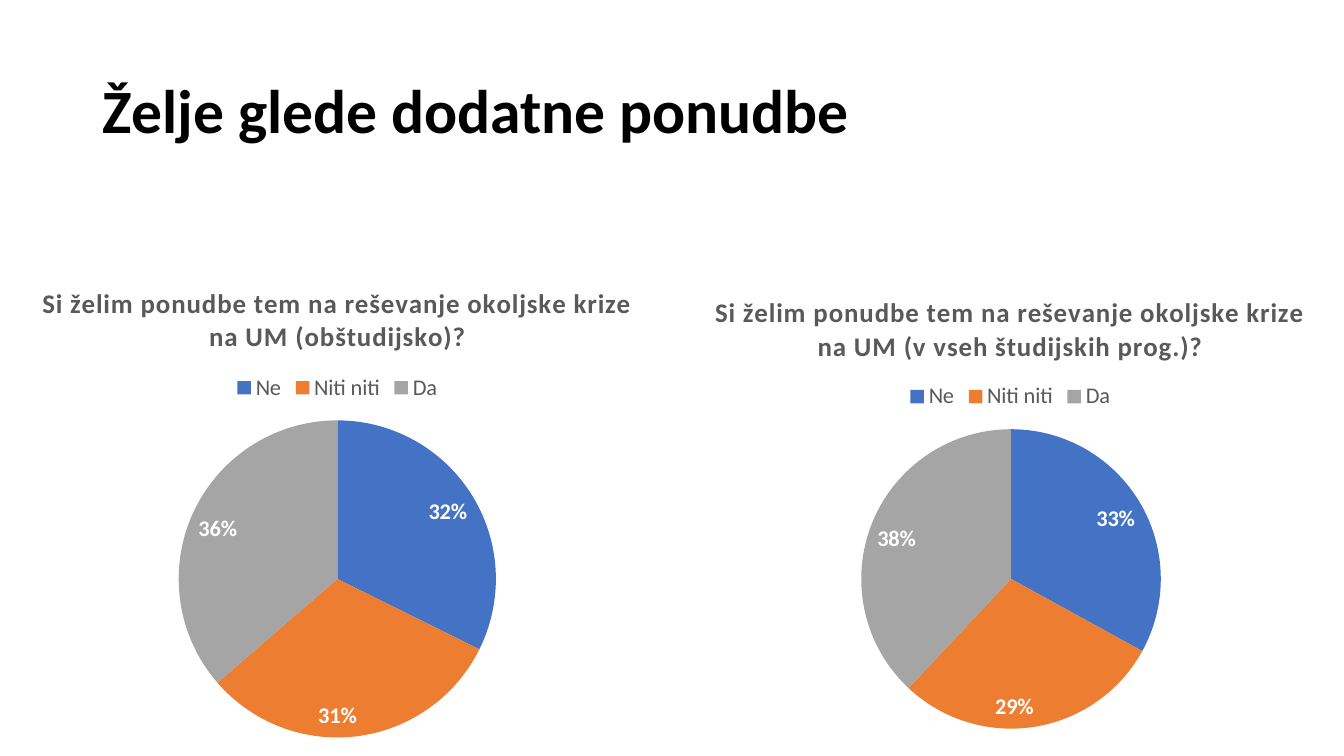
from pptx import Presentation
from pptx.chart.data import CategoryChartData
from pptx.dml.color import RGBColor
from pptx.enum.chart import XL_CHART_TYPE, XL_LABEL_POSITION, XL_LEGEND_POSITION
from pptx.enum.text import MSO_ANCHOR, PP_ALIGN
from pptx.oxml import parse_xml
from pptx.oxml.ns import nsdecls, qn
from pptx.util import Inches, Pt

PIE = XL_CHART_TYPE.PIE
TOP = XL_LEGEND_POSITION.TOP
INSIDE = XL_LABEL_POSITION.INSIDE_END
MIDDLE = MSO_ANCHOR.MIDDLE
LEFT = PP_ALIGN.LEFT
WIDE, HIGH = Inches(13.33), Inches(7.5)
FACE = "Calibri"
HUES = {"Ne": "4472C4", "Niti niti": "ED7D31", "Da": "A5A5A5",
        "ink": "000000", "gray": "595959", "white": "FFFFFF"}
ANSWERS = ("Ne", "Niti niti", "Da")


def style(font, size, hue, bold=False):
    """Set face, size, colour and weight of a font."""
    font.name, font.size, font.bold = FACE, Pt(size), bold
    font.color.rgb = RGBColor.from_string(HUES[hue])


def area(left, top, width, height):
    """Turn shares of the slide into lengths."""
    return [int(WIDE * left), int(HIGH * top), int(WIDE * width), int(HIGH * height)]


def pin(part, after, **shares):
    """Fix a chart part at shares of the chart's size."""
    for old in part.findall(qn("c:layout")):
        part.remove(old)
    inner = '<c:layoutTarget val="inner"/>' if "w" in shares else ""
    modes = "".join(f'<c:{key}Mode val="edge"/>' for key in "xy")
    sizes = "".join(f'<c:{key} val="{val}"/>' for key, val in shares.items())
    layout = parse_xml(f'<c:layout {nsdecls("c")}><c:manualLayout>{inner}{modes}'
                       f'{sizes}</c:manualLayout></c:layout>')
    if after:
        part.find(qn(after)).addnext(layout)
    else:
        part.insert(0, layout)


def add_title(slide, text):
    """Fill and place the slide title."""
    title = slide.shapes.title
    title.left, title.top, title.width, title.height = area(0.069, 0.054, 0.863, 0.193)
    frame = title.text_frame
    frame.text = text
    frame.vertical_anchor = MIDDLE
    line = frame.paragraphs[0]
    line.line_spacing = 0.9
    line.alignment = LEFT
    style(line.runs[0].font, 44, "ink", True)


def add_pie(slide, box, text, values, pie, key, head):
    """Add a pie chart of the answers to one question."""
    data = CategoryChartData()
    data.categories = ANSWERS
    data.add_series("Series 1", values)
    chart = slide.shapes.add_chart(PIE, *area(*box), data).chart
    style(chart.font, 16, "ink")
    chart.has_title = True
    frame = chart.chart_title.text_frame
    frame.text = text
    run = frame.paragraphs[0].runs[0]
    style(run.font, 19.2, "gray", True)
    run.font._element.set("spc", "50")
    chart.chart_title.include_in_layout = False
    chart.has_legend = True
    chart.legend.position = TOP
    chart.legend.include_in_layout = False
    style(chart.legend.font, 16, "gray")
    plot = chart.plots[0]
    plot.vary_by_categories = True
    for spot, name in enumerate(ANSWERS):
        fill = plot.series[0].points[spot].format.fill
        fill.solid()
        fill.fore_color.rgb = RGBColor.from_string(HUES[name])
    plot.has_data_labels = True
    labels = plot.data_labels
    labels.show_percentage, labels.show_value = True, False
    labels.number_format, labels.number_format_is_linked = "0%", False
    labels.position = INSIDE
    style(labels.font, 16, "white", True)
    pin(chart._chartSpace.chart.plotArea, None, **dict(zip("xywh", pie)))
    pin(chart.legend._element, "c:legendPos", **dict(zip("xy", key)))
    pin(chart.chart_title._element, "c:tx", **dict(zip("xy", head)))


def main():
    """Build and save the slide."""
    deck = Presentation()
    deck.slide_width, deck.slide_height = WIDE, HIGH
    slide = deck.slides.add_slide(deck.slide_layouts[5])
    add_title(slide, "Želje glede dodatne ponudbe")
    ask = "Si želim ponudbe tem na reševanje okoljske krize na UM"
    add_pie(slide, (-0.03, 0.349, 0.562, 0.645), f"{ask} (obštudijsko)?",
            (32, 31, 36), (0.29, 0.321, 0.42, 0.651), (0.358, 0.217), (0.103, 0.031))
    add_pie(slide, (0.464, 0.361, 0.576, 0.621), f"{ask} (v vseh študijskih prog.)?",
            (33, 29, 38), (0.307, 0.333, 0.387, 0.638), (0.361, 0.225), (0.112, 0.033))
    deck.save("out.pptx")


if __name__ == "__main__":
    main()
